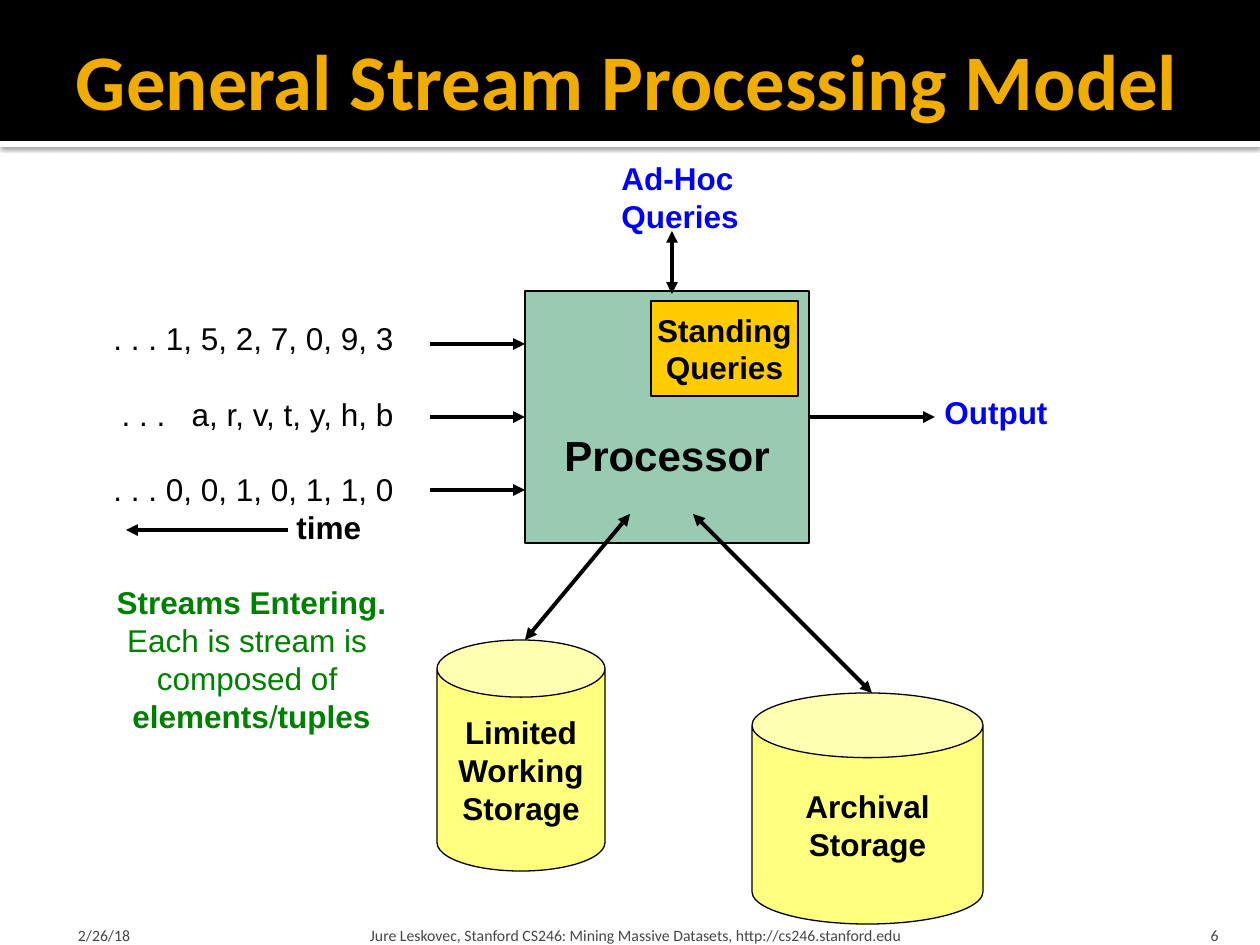
from dataclasses import dataclass

from pptx import Presentation
from pptx.dml.color import RGBColor
from pptx.enum.shapes import MSO_CONNECTOR as Link, MSO_SHAPE as Shape
from pptx.enum.text import MSO_ANCHOR as Anchor, MSO_AUTO_SIZE as Fit, PP_ALIGN as Align
from pptx.oxml.ns import qn
from pptx.util import Emu, Pt
from lxml.etree import SubElement

BLACK = RGBColor(0x00, 0x00, 0x00)
WHITE = RGBColor(0xFF, 0xFF, 0xFF)
AMBER = RGBColor(0xF0, 0xAD, 0x00)
GRAY = RGBColor(0x45, 0x45, 0x45)
TEAL = RGBColor(0x33, 0x99, 0x66)
YELLOW = RGBColor(0xFF, 0xFF, 0x00)
GOLD = RGBColor(0xFF, 0xCC, 0x00)
BLUE = RGBColor(0x00, 0x00, 0xFF)
GREEN = RGBColor(0x00, 0x80, 0x00)

SCALE = 914400 / 126
LINE_GAP = 21.5


def px(length):
    return Emu(round(length * SCALE))


@dataclass(frozen=True)
class Type:
    size: int = 18
    color: RGBColor = BLACK
    bold: bool = False
    font: str = "Arial"


PLAIN = Type()
BOLD = Type(bold=True)
QUERY = Type(color=BLUE, bold=True)
NOTE = Type(color=GREEN)
NOTE_BOLD = Type(color=GREEN, bold=True)
PROCESSOR = Type(size=24, bold=True)
TITLE = Type(45, AMBER, True, "Calibri")
FOOTER = Type(9, GRAY, False, "Calibri")


class Page:
    def __init__(self, deck):
        self.slide = deck.slides.add_slide(deck.slide_layouts[5])
        self.shapes = self.slide.shapes

    def add_para(self, box, *spans, align=Align.LEFT, gap=0, indent=0):
        frame = box.text_frame
        para = frame.paragraphs[0]
        if para.runs:
            para = frame.add_paragraph()
        para.alignment = align
        para.space_before = Pt(gap)
        if indent:
            para._p.get_or_add_pPr().set("marL", str(px(indent)))
        for text, kind in spans:
            for number, part in enumerate(text.split("\n")):
                if number:
                    para.add_line_break()
                if part:
                    span = para.add_run()
                    span.text = part
                    span.font.name = kind.font
                    span.font.size = Pt(kind.size)
                    span.font.bold = kind.bold
                    span.font.color.rgb = kind.color

    def title(self, text, left, top, width, height):
        box = self.shapes.title
        box.left, box.top, box.width, box.height = map(px, (left, top, width, height))
        box.element.getparent().append(box.element)
        frame = box.text_frame
        frame.auto_size = Fit.NONE
        frame.vertical_anchor = Anchor.MIDDLE
        frame.margin_left, frame.margin_right = px(13), px(6)
        self.add_para(box, (text, TITLE))

    def box(self, left, top, width, height, anchor=Anchor.TOP):
        box = self.shapes.add_textbox(px(left), px(top), px(width), px(height))
        box.text_frame.word_wrap = True
        box.text_frame.vertical_anchor = anchor
        return box

    def footer(self, text, left, width, inset, align=Align.LEFT):
        box = self.box(left, 907, width, 38, Anchor.BOTTOM)
        frame = box.text_frame
        frame.margin_left = px(inset)
        frame.margin_bottom = 0
        self.add_para(box, (text, FOOTER), align=align)

    def bar(self, top, height, color):
        bar = self.shapes.add_shape(Shape.RECTANGLE, 0, px(top), px(1260), px(height))
        bar.shadow.inherit = False
        bar.fill.solid()
        bar.fill.fore_color.rgb = color
        bar.line.fill.background()
        return bar

    def shaded_bar(self, top, height, color):
        bar = self.bar(top, height, color)
        effects = bar.element.spPr.find(qn("a:effectLst"))
        shadow = SubElement(effects, qn("a:outerShdw"), blurRad=str(Pt(2.5)),
                            dist=str(Pt(0.8)), dir="5400000", rotWithShape="0")
        tint = SubElement(shadow, qn("a:srgbClr"), val=str(BLACK))
        SubElement(tint, qn("a:alpha"), val="60000")

    def block(self, kind, left, top, width, height, color, lines,
              style=BOLD, opacity=100, curve=None, drop=0):
        block = self.shapes.add_shape(kind, px(left), px(top), px(width), px(height))
        block.shadow.inherit = False
        if curve:
            block.adjustments[0] = curve
        block.fill.solid()
        block.fill.fore_color.rgb = color
        if opacity < 100:
            tint = block.element.spPr.find(qn("a:solidFill")).find(qn("a:srgbClr"))
            SubElement(tint, qn("a:alpha"), val=str(opacity * 1000))
        block.line.color.rgb = BLACK
        block.line.width = Pt(0.75)
        frame = block.text_frame
        frame.word_wrap = False
        frame.vertical_anchor = Anchor.MIDDLE
        frame.margin_top = px(6 + drop)
        for line in lines:
            self.add_para(block, (line, style), align=Align.CENTER)

    def arrow(self, start, end, both=False):
        arrow = self.shapes.add_connector(Link.STRAIGHT, *map(px, start + end))
        arrow.line.color.rgb = BLACK
        arrow.line.width = Pt(2.25)
        line = arrow.element.spPr.find(qn("a:ln"))
        if both:
            SubElement(line, qn("a:headEnd"), type="triangle")
        SubElement(line, qn("a:tailEnd"), type="triangle")
        SubElement(arrow.element.spPr, qn("a:effectLst"))


def main():
    deck = Presentation()
    deck.slide_width, deck.slide_height = px(1260), px(945)
    page = Page(deck)

    page.shaded_bar(141, 6, WHITE)
    page.bar(0, 141, BLACK)
    page.title("General Stream Processing Model", 63, 21, 1197, 116)
    page.footer("2/26/18", 63, 294, 15)
    page.footer("Jure Leskovec, Stanford CS246: Mining Massive Datasets, "
                "http://cs246.stanford.edu", 364, 759, 6)
    page.footer("6", 1130, 101, 13, Align.RIGHT)

    page.block(Shape.RECTANGLE, 525, 291, 284, 252, TEAL, ["Processor"],
               PROCESSOR, opacity=50, drop=76)
    page.block(Shape.CAN, 437, 640, 168, 231, YELLOW,
               ["Limited", "Working", "Storage"], opacity=50, curve=0.34)
    page.block(Shape.CAN, 752, 693, 231, 231, YELLOW,
               ["Archival", "Storage"], opacity=50, curve=0.28)
    page.block(Shape.RECTANGLE, 651, 301, 147, 95, GOLD, ["Standing", "Queries"])

    streams = page.box(97, 313, 309, 432)
    entries = (". . . 1, 5, 2, 7, 0, 9, 3", ". . .   a, r, v, t, y, h, b",
               ". . . 0, 0, 1, 0, 1, 1, 0")
    for row, entry in enumerate(entries):
        page.add_para(streams, (entry, PLAIN), align=Align.RIGHT,
                      gap=LINE_GAP if row else 0)
        y = 344 + 73 * row
        page.arrow((430, y), (525, y))
    page.add_para(streams, ("time", BOLD), indent=187)
    page.add_para(streams, ("Streams Entering.", NOTE_BOLD),
                  align=Align.CENTER, gap=LINE_GAP)
    page.add_para(streams, ("Each is stream is \ncomposed of \n", NOTE),
                  ("elements", NOTE_BOLD), ("/", NOTE), ("tuples", NOTE_BOLD),
                  align=Align.CENTER)
    page.arrow((288, 530), (126, 530))

    queries = page.box(609, 153, 146, 89)
    for line in ("Ad-Hoc", "Queries"):
        page.add_para(queries, (line, QUERY))
    output = page.box(932, 387, 132, 50)
    page.add_para(output, ("Output", QUERY))
    page.arrow((809, 417), (935, 417))

    for start, end in (((672, 231), (672, 294)), ((630, 514), (525, 640)),
                       ((693, 514), (872, 693))):
        page.arrow(start, end, both=True)

    deck.save("out.pptx")


if __name__ == "__main__":
    main()
